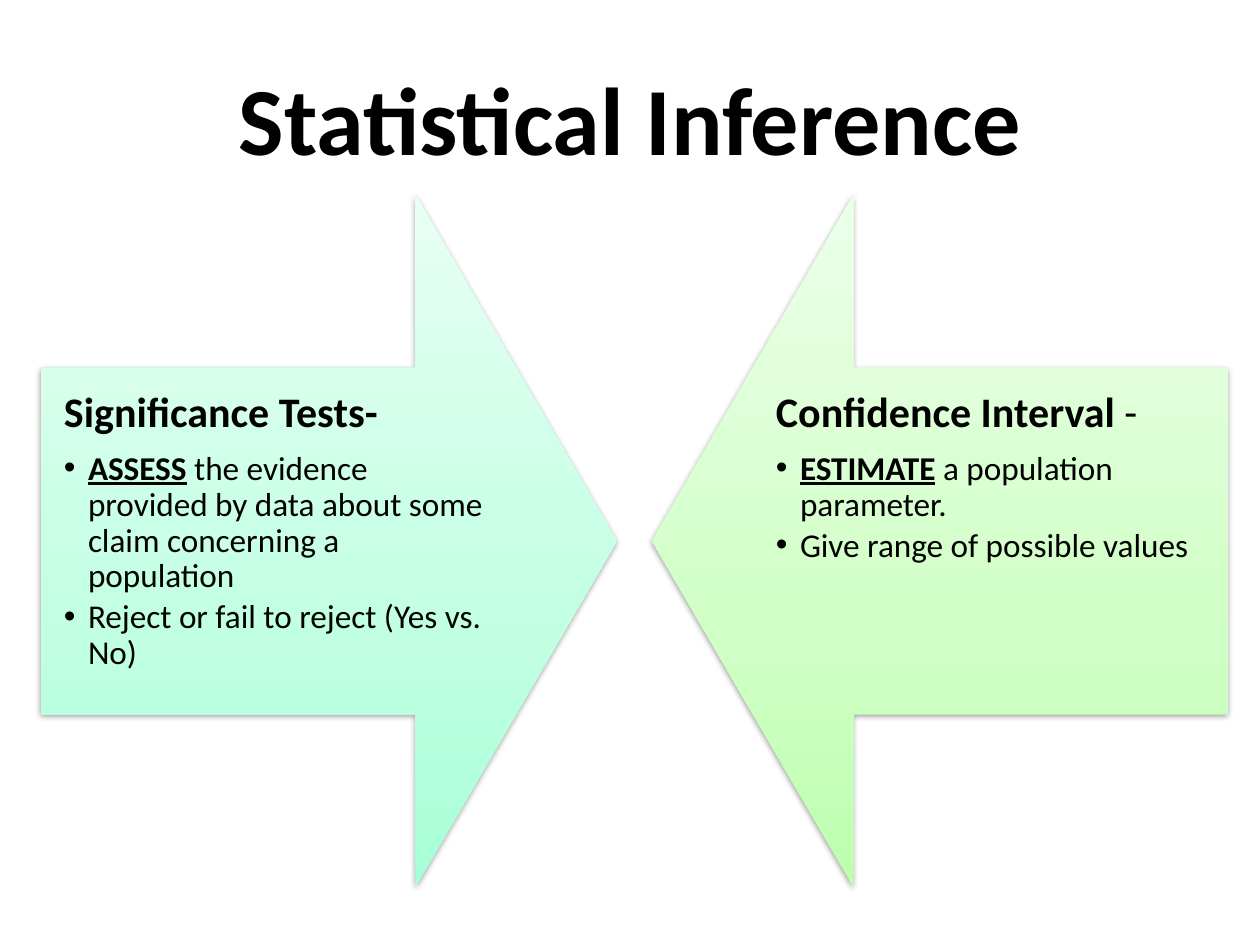
"""Build the Statistical Inference slide with two opposing arrows."""
from dataclasses import dataclass

from lxml.etree import SubElement
from pptx import Presentation
from pptx.dml.color import RGBColor
from pptx.enum.shapes import MSO_SHAPE
from pptx.enum.text import MSO_ANCHOR, PP_ALIGN
from pptx.oxml import parse_xml
from pptx.oxml.ns import nsdecls, qn
from pptx.util import Pt

TITLE = "Statistical Inference"
SIDES = [
    {
        "heading": [("Significance Tests-", True)],
        "bullets": [
            ("ASSESS", " the evidence provided by data about some claim concerning a population"),
            ("", "Reject or fail to reject (Yes vs. No)"),
        ],
        "colors": ("A6FFD7", "C0FFE2", "E7FFF4"),
        "rotation": 270,
        "center": 329,
        "text_left": 40,
    },
    {
        "heading": [("Confidence Interval ", True), ("-", False)],
        "bullets": [
            ("ESTIMATE", " a population parameter."),
            ("", "Give range of possible values"),
        ],
        "colors": ("BCFFAD", "CFFFC5", "ECFFE9"),
        "rotation": 90,
        "center": 940,
        "text_left": 752,
    },
]
SLIDE_SIZE = (1260, 945)
TITLE_BOX = (63, 38, 1134, 158)
MIDDLE = 541
ARROW_SPAN, ARROW_LENGTH = 693, 576
TEXT_WIDTH, TEXT_HEIGHT = 475, 347
INSET = 24
GRADIENT_STOPS = (0, 35000, 100000)


@dataclass(frozen=True)
class Theme:
    font: str = "Calibri"
    ink: str = "000000"
    title: int = 55
    heading: int = 24
    body: int = 19
    heading_gap: float = 8.4
    body_gap: float = 2.85


THEME = Theme()


def px(value):
    return round(value * 914400 / 126)


def add_run(paragraph, text, size, bold=False, underline=False):
    run = paragraph.add_run()
    run.text = text
    run.font.name = THEME.font
    run.font.size = Pt(size)
    run.font.bold = bold
    run.font.underline = underline
    run.font.color.rgb = RGBColor.from_string(THEME.ink)


def add_text_box(slide, box):
    text_frame = slide.shapes.add_textbox(*map(px, box)).text_frame
    text_frame.word_wrap = True
    return text_frame


def add_title(slide):
    text_frame = add_text_box(slide, TITLE_BOX)
    text_frame.vertical_anchor = MSO_ANCHOR.MIDDLE
    paragraph = text_frame.paragraphs[0]
    paragraph.alignment = PP_ALIGN.CENTER
    add_run(paragraph, TITLE, THEME.title, bold=True)


def add_arrow(slide, side):
    box = (side["center"] - ARROW_SPAN / 2, MIDDLE - ARROW_LENGTH / 2, ARROW_SPAN, ARROW_LENGTH)
    arrow = slide.shapes.add_shape(MSO_SHAPE.DOWN_ARROW, *map(px, box))
    arrow.rotation = side["rotation"]
    arrow.adjustments[0], arrow.adjustments[1] = 0.5, 0.35
    arrow.line.fill.background()
    arrow.shadow.inherit = False
    stops = "".join(
        f'<a:gs pos="{position}"><a:srgbClr val="{color}"/></a:gs>'
        for position, color in zip(GRADIENT_STOPS, side["colors"])
    )
    gradient = parse_xml(
        f'<a:gradFill {nsdecls("a")} rotWithShape="0"><a:gsLst>{stops}</a:gsLst>'
        '<a:lin ang="16200000" scaled="0"/></a:gradFill>'
    )
    properties = arrow._element.spPr
    properties.find(qn("a:prstGeom")).addnext(gradient)
    shadow = parse_xml(
        f'<a:outerShdw {nsdecls("a")} blurRad="{Pt(3.1)}" dist="{Pt(1.6)}" dir="5400000" '
        f'rotWithShape="0"><a:srgbClr val="{THEME.ink}"><a:alpha val="38000"/></a:srgbClr></a:outerShdw>'
    )
    properties.find(qn("a:effectLst")).append(shadow)


def add_bullet(paragraph):
    properties = paragraph._p.get_or_add_pPr()
    properties.set("marL", str(px(INSET)))
    properties.set("indent", str(-px(INSET)))
    SubElement(properties, qn("a:buFont"), typeface="Arial")
    SubElement(properties, qn("a:buChar"), char="•")


def add_side_text(slide, side):
    box = (side["text_left"], MIDDLE - TEXT_HEIGHT / 2, TEXT_WIDTH, TEXT_HEIGHT)
    text_frame = add_text_box(slide, box)
    for edge in ("left", "top", "right", "bottom"):
        setattr(text_frame, f"margin_{edge}", px(INSET))
    heading = text_frame.paragraphs[0]
    heading.line_spacing = 0.9
    heading.space_after = Pt(THEME.heading_gap)
    for text, bold in side["heading"]:
        add_run(heading, text, THEME.heading, bold)
    for keyword, text in side["bullets"]:
        paragraph = text_frame.add_paragraph()
        paragraph.level = 1
        paragraph.line_spacing = 0.9
        paragraph.space_after = Pt(THEME.body_gap)
        add_bullet(paragraph)
        if keyword:
            add_run(paragraph, keyword, THEME.body, bold=True, underline=True)
        add_run(paragraph, text, THEME.body)


def main():
    presentation = Presentation()
    presentation.slide_width, presentation.slide_height = map(px, SLIDE_SIZE)
    slide = presentation.slides.add_slide(presentation.slide_layouts[6])
    add_title(slide)
    for side in SIDES:
        add_arrow(slide, side)
        add_side_text(slide, side)
    presentation.save("out.pptx")


if __name__ == "__main__":
    main()
